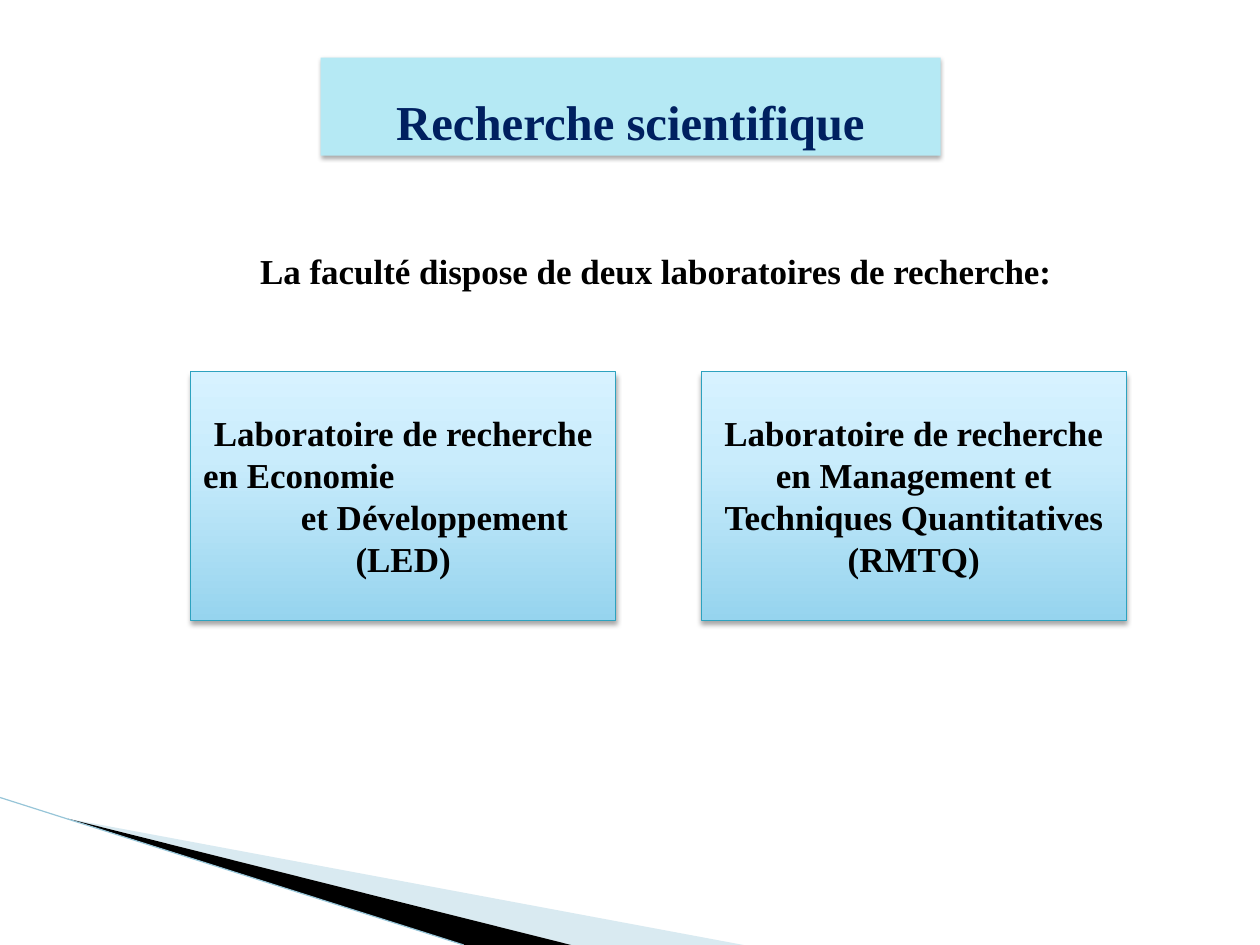
import copy

import lxml.etree
import pptx
import pptx.dml.color
import pptx.enum.shapes
import pptx.enum.text
import pptx.oxml.ns
import pptx.util

Pt = pptx.util.Pt
qn = pptx.oxml.ns.qn
ALIGN = pptx.enum.text.PP_ALIGN

COLORS = {
    "title_fill": "B5E9F4",
    "title_text": "002060",
    "text": "000000",
    "box_line": "2DA2BF",
    "box_bottom": "96D4EE",
    "box_middle": "C9ECFC",
    "box_top": "D7F2FF",
    "wedge_light": "A0CBDC",
    "wedge_dark": "000000",
    "wedge_line": "97C5D8",
    "shadow": "000000",
}
FONT = "Times New Roman"
WIDTH, HEIGHT = 1008, 756


def rgb(name):
    return pptx.dml.color.RGBColor.from_string(COLORS[name])


def add_element(parent, tag, **attributes):
    values = {key: str(value) for key, value in attributes.items()}
    return lxml.etree.SubElement(parent, qn(tag), values)


def add_shadow(shape, opacity, blur, distance):
    effects = add_element(shape._element.spPr, "a:effectLst")
    shadow = add_element(effects, "a:outerShdw", blurRad=Pt(blur), dist=Pt(distance),
                         dir=90 * 60000, rotWithShape=0)
    color = add_element(shadow, "a:srgbClr", val=COLORS["shadow"])
    add_element(color, "a:alpha", val=opacity * 1000)


def write_text(paragraph, text, size=28, color="text", align=ALIGN.CENTER,
               spacing=1.0, indent=0):
    paragraph.text = text
    paragraph.alignment = align
    paragraph.line_spacing = spacing
    if indent:
        paragraph._p.get_or_add_pPr().set("marL", str(Pt(indent)))
    font = paragraph.font
    font.name, font.size, font.bold = FONT, Pt(size), True
    font.color.rgb = rgb(color)


def set_frame(frame, horizontal=7.2, vertical=3.6):
    frame.word_wrap = True
    frame.auto_size = pptx.enum.text.MSO_AUTO_SIZE.NONE
    frame.vertical_anchor = pptx.enum.text.MSO_ANCHOR.MIDDLE
    frame.margin_left = frame.margin_right = Pt(horizontal)
    frame.margin_top = frame.margin_bottom = Pt(vertical)


def add_wedge(slide, points, color, opacity=100):
    builder = slide.shapes.build_freeform(Pt(points[0][0]), Pt(points[0][1]))
    builder.add_line_segments([(Pt(x), Pt(y)) for x, y in points[1:]], close=True)
    wedge = builder.convert_to_shape()
    wedge.shadow.inherit = False
    wedge.fill.solid()
    wedge.fill.fore_color.rgb = rgb(color)
    wedge.line.fill.background()
    if opacity < 100:
        fill_color = wedge._element.spPr.find(qn("a:solidFill"))[0]
        add_element(fill_color, "a:alpha", val=opacity * 1000)


def add_corner(slide, left, top, width, height):
    bottom = top + height
    tip = (left + 54.5, top + 17)
    middle = (left + 457, bottom)
    add_wedge(slide, [tip, (left + width, bottom), middle], "wedge_light", opacity=40)
    add_wedge(slide, [tip, middle, (left + 371, bottom)], "wedge_dark")
    line = slide.shapes.add_connector(pptx.enum.shapes.MSO_CONNECTOR.STRAIGHT,
                                      Pt(left), Pt(top), Pt(left + 371), Pt(bottom))
    line.line.color.rgb = rgb("wedge_line")
    line.line.width = Pt(0.95)
    add_element(line._element.spPr, "a:effectLst")


def place_title(slide, left, top, width, height):
    title = slide.shapes.title
    title.left, title.top, title.width, title.height = map(Pt, (left, top, width, height))
    geometry = add_element(title._element.spPr, "a:prstGeom", prst="roundRect")
    add_element(geometry, "a:avLst")
    title.fill.solid()
    title.fill.fore_color.rgb = rgb("title_fill")
    add_shadow(title, 32, 3.5, 2.2)
    set_frame(title.text_frame, 10, 5)
    write_text(title.text_frame.paragraphs[0], "Recherche scientifique",
               size=39, color="title_text", spacing=1.5)


def add_introduction(slide, left, top, width, height):
    box = slide.shapes.add_textbox(*map(Pt, (left, top, width, height)))
    set_frame(box.text_frame)
    write_text(box.text_frame.paragraphs[0],
               "La faculté dispose de deux laboratoires de recherche:")


def add_laboratory(slide, left, top, width, height, lines):
    box = slide.shapes.add_shape(pptx.enum.shapes.MSO_SHAPE.RECTANGLE,
                                 *map(Pt, (left, top, width, height)))
    box.fill.gradient()
    box.fill.gradient_angle = 90
    stops = box._element.spPr.find(qn("a:gradFill")).find(qn("a:gsLst"))
    stops.append(copy.deepcopy(stops[-1]))
    gradient = [(0, "box_bottom"), (0.65, "box_middle"), (1, "box_top")]
    for stop, (position, color) in zip(box.fill.gradient_stops, gradient):
        stop.position = position
        stop.color.rgb = rgb(color)
    box.line.color.rgb = rgb("box_line")
    box.line.width = Pt(0.75)
    add_shadow(box, 35, 4, 3)
    frame = box.text_frame
    set_frame(frame)
    for index, (text, options) in enumerate(lines):
        paragraph = frame.add_paragraph() if index else frame.paragraphs[0]
        write_text(paragraph, text, **options)


def main():
    presentation = pptx.Presentation()
    presentation.slide_width, presentation.slide_height = Pt(WIDTH), Pt(HEIGHT)
    slide = presentation.slides.add_slide(presentation.slide_layouts[5])
    add_corner(slide, 0, 638, 595, HEIGHT - 638)
    place_title(slide, 256.5, 46, 496, 78.5)
    add_introduction(slide, 78.5, 196.5, 892, 40)
    laboratories = [
        [("Laboratoire de recherche", {}),
         ("en Economie", {"align": ALIGN.LEFT, "indent": 3}),
         ("et Développement", {"indent": 50}),
         ("(LED)", {})],
        [("Laboratoire de recherche en Management et Techniques Quantitatives (RMTQ)", {})],
    ]
    for column, lines in enumerate(laboratories):
        add_laboratory(slide, 152.5 + column * 408.5, 297.5, 340, 198.5, lines)
    presentation.save("out.pptx")


if __name__ == "__main__":
    main()
